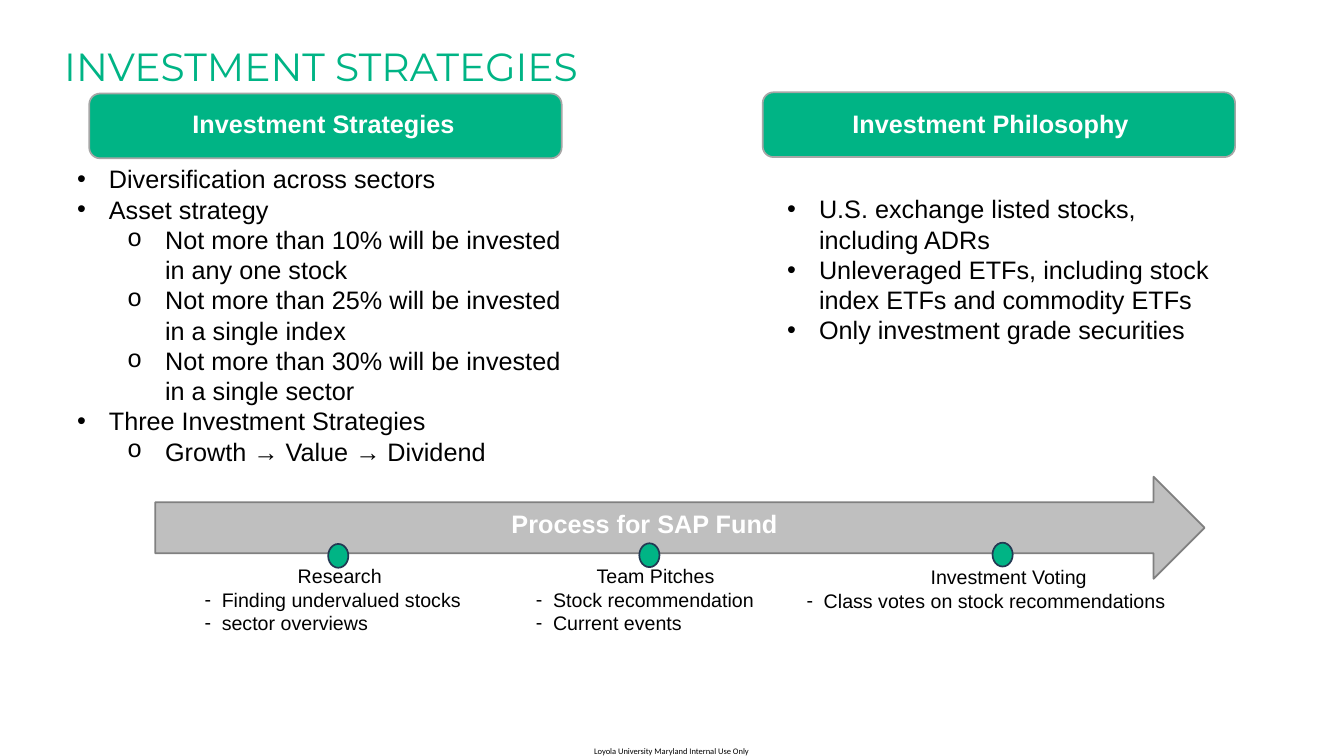
from lxml.etree import SubElement
from pptx import Presentation
from pptx.dml.color import RGBColor
from pptx.enum.shapes import MSO_SHAPE
from pptx.enum.text import MSO_ANCHOR, MSO_AUTO_SIZE, PP_ALIGN
from pptx.oxml.ns import qn
from pptx.util import Inches, Pt

COLORS = {
    "green": "00B485",
    "silver": "BFBFBF",
    "gray": "808080",
    "border": "A6A6A6",
    "navy": "233953",
    "black": "000000",
    "white": "FFFFFF",
}
BULLETS = {
    "main": ("•", "Arial", 0.52, 0.52),
    "sub": ("o", "Courier New", 1.44, 0.62),
    "dash": ("-", "Arial", 0.28, 0.28),
}

deck = Presentation()
deck.slide_width, deck.slide_height = Inches(21.99), Inches(12.37)
page = deck.slides.add_slide(deck.slide_layouts[3])


def area(left, top, width, height):
    column, row = deck.slide_width / 100, deck.slide_height / 100
    return [round(n) for n in (left * column, top * row, width * column, height * row)]


def write(box, place, lines, size, color="black", font="Arial", bold=False):
    box.left, box.top, box.width, box.height = area(*place)
    frame = box.text_frame
    frame.word_wrap = True
    frame.auto_size = MSO_AUTO_SIZE.NONE
    frame.vertical_anchor = MSO_ANCHOR.TOP
    for number, (kind, text) in enumerate(lines):
        para = frame.add_paragraph() if number else frame.paragraphs[0]
        para.text = text
        para.alignment = PP_ALIGN.CENTER if kind == "center" else PP_ALIGN.LEFT
        para.level = 1 if kind == "sub" else 0
        para.line_spacing = Pt(size * 1.2)
        para.space_before = para.space_after = Pt(0)
        if kind in BULLETS:
            mark, face, margin, hang = BULLETS[kind]
            props = para._p.get_or_add_pPr()
            props.set("marL", str(Inches(margin)))
            props.set("indent", str(-Inches(hang)))
            SubElement(props, qn("a:buFont"), typeface=face)
            SubElement(props, qn("a:buChar"), char=mark)
        para.font.name = font
        para.font.size = Pt(size)
        para.font.bold = bold
        para.font.color.rgb = RGBColor.from_string(COLORS[color])


title, strategies, philosophy = page.placeholders
write(title, (4.32, 5.17, 54.39, 7.11), [("plain", "INVESTMENT STRATEGIES")],
      46.2, "green", "Montserrat")
write(strategies, (5.28, 21.26, 37.88, 41.23), [
    ("main", "Diversification across sectors"),
    ("main", "Asset strategy"),
    ("sub", "Not more than 10% will be invested in any one stock"),
    ("sub", "Not more than 25% will be invested in a single index"),
    ("sub", "Not more than 30% will be invested in a single sector"),
    ("main", "Three Investment Strategies"),
    ("sub", "Growth → Value → Dividend"),
], 29.7)
write(philosophy, (58.12, 25.22, 32.65, 31.29), [
    ("main", "U.S. exchange listed stocks, including ADRs"),
    ("main", "Unleveraged ETFs, including stock index ETFs and commodity ETFs"),
    ("main", "Only investment grade securities"),
], 29.7)

shapes = [
    (MSO_SHAPE.RIGHT_ARROW, (11.55, 63.06, 78.08, 13.5), "silver", "gray"),
    (MSO_SHAPE.ROUNDED_RECTANGLE, (56.75, 12.21, 35.15, 8.57), "green", "border"),
    (MSO_SHAPE.ROUNDED_RECTANGLE, (6.64, 12.37, 35.15, 8.57), "green", "border"),
    (MSO_SHAPE.OVAL, (24.42, 71.95, 1.5, 3.15), "green", "navy"),
    (MSO_SHAPE.OVAL, (47.57, 71.87, 1.5, 3.15), "green", "navy"),
    (MSO_SHAPE.OVAL, (73.85, 71.79, 1.5, 3.15), "green", "navy"),
]
for preset, place, fill, line in shapes:
    shape = page.shapes.add_shape(preset, *area(*place))
    shape.shadow.inherit = False
    shape.fill.solid()
    shape.fill.fore_color.rgb = RGBColor.from_string(COLORS[fill])
    shape.line.color.rgb = RGBColor.from_string(COLORS[line])
    shape.line.width = Pt(2)

headings = [
    ("Investment Strategies", (13.87, 13.99, 21.83, 4.85)),
    ("Investment Philosophy", (62.98, 13.99, 24.1, 4.85)),
    ("Process for SAP Fund", (37.61, 66.86, 24.69, 4.85)),
]
for text, place in headings:
    box = page.shapes.add_textbox(*area(*place))
    write(box, place, [("plain", text)], 29.7, "white", bold=True)

steps = [
    ((14.78, 74.21, 21.01, 10.27), "Research",
     ["Finding undervalued stocks", "sector overviews"]),
    ((39.43, 74.21, 18.69, 10.27), "Team Pitches",
     ["Stock recommendation", "Current events"]),
    ((59.57, 74.37, 30.97, 7.11), "Investment Voting",
     ["Class votes on stock recommendations"]),
]
for place, name, tasks in steps:
    box = page.shapes.add_textbox(*area(*place))
    write(box, place, [("center", name)] + [("dash", task) for task in tasks], 23.1)

notice_place = (44.2, 98.63, 11.69, 1.37)
notice = page.shapes.add_textbox(*area(*notice_place))
write(notice, notice_place, [("plain", "Loyola University Maryland Internal Use Only")],
      10, font="Calibri")
frame = notice.text_frame
frame.word_wrap = False
frame.margin_left = frame.margin_right = frame.margin_top = frame.margin_bottom = 0

deck.save("out.pptx")
